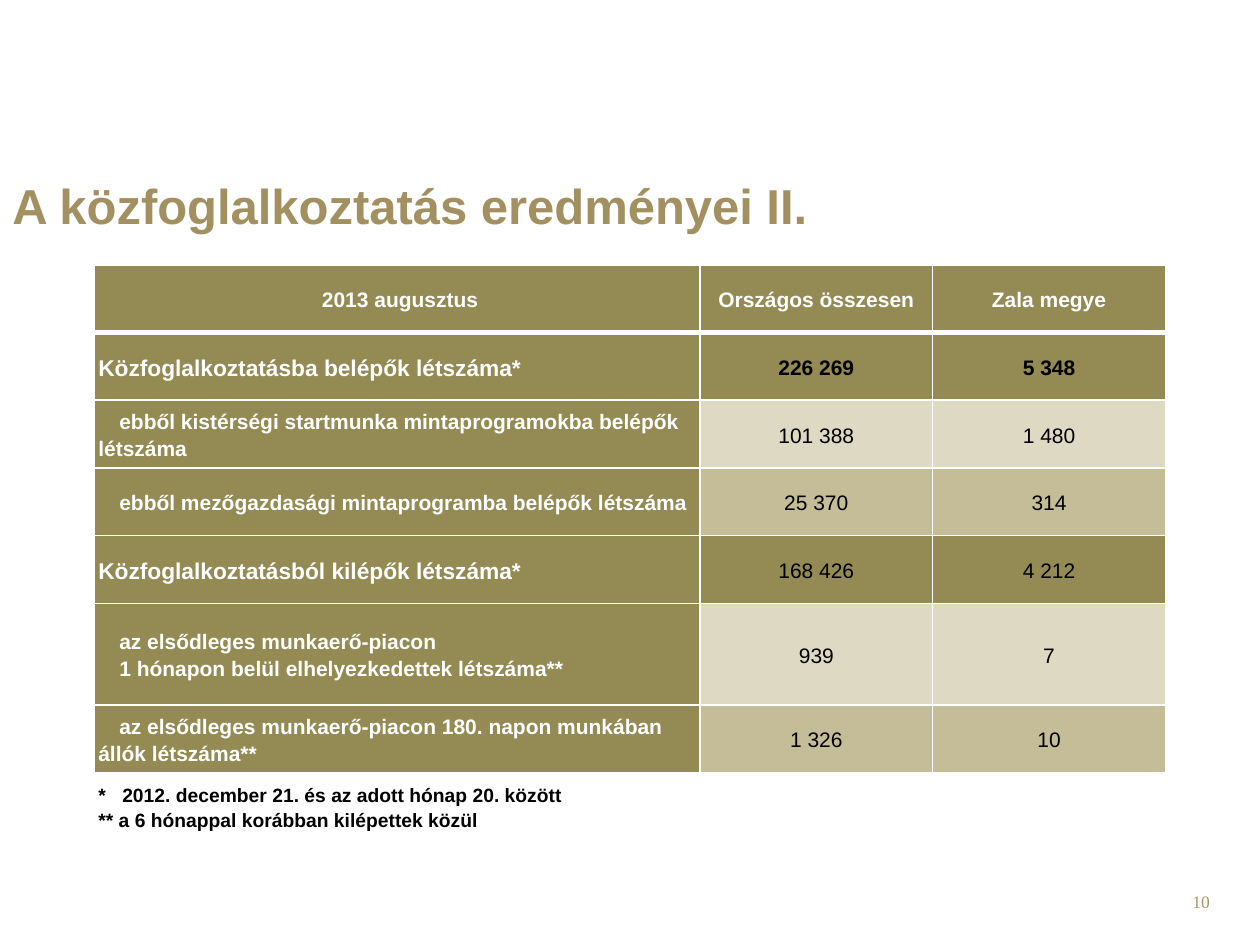
import pptx
import pptx.dml.color
import pptx.enum.text
import pptx.oxml
import pptx.oxml.ns
import pptx.util

Pt = pptx.util.Pt
ALIGN = pptx.enum.text.PP_ALIGN
ANCHOR = pptx.enum.text.MSO_ANCHOR

COLORS = {
    "title": "A29061",
    "number": "A69765",
    "olive": "948A54",
    "sand": "C4BD97",
    "pale": "DDD9C3",
    "white": "FFFFFF",
    "black": "000000",
}


def write(frame, lines, color, font, align=ALIGN.LEFT, spacing=1.0, indent=0, tab=None):
    frame.word_wrap = True
    for index, line in enumerate(lines):
        para = frame.paragraphs[0] if index == 0 else frame.add_paragraph()
        para.alignment = align
        para.line_spacing = spacing
        properties = para._p.get_or_add_pPr()
        if indent:
            properties.set("indent", str(Pt(indent)))
        if tab and "\t" in line:
            tabs = pptx.oxml.parse_xml(
                f'<a:tabLst {pptx.oxml.ns.nsdecls("a")}><a:tab pos="{Pt(tab)}" algn="l"/></a:tabLst>'
            )
            properties.append(tabs)
        span = para.add_run()
        span.text = line
        for name, value in font.items():
            setattr(span.font, name, value)
        span.font.color.rgb = pptx.dml.color.RGBColor.from_string(COLORS[color])


def set_borders(cell, widths):
    properties = cell._tc.get_or_add_tcPr()
    for index, (side, width) in enumerate(widths.items()):
        line = pptx.oxml.parse_xml(
            f'<a:{side} {pptx.oxml.ns.nsdecls("a")} w="{Pt(width)}"><a:solidFill>'
            f'<a:srgbClr val="{COLORS["white"]}"/></a:solidFill></a:{side}>'
        )
        properties.insert(index, line)


deck = pptx.Presentation()
deck.slide_width, deck.slide_height = Pt(720), Pt(540)
page = deck.slides.add_slide(deck.slide_layouts[6])

title = page.shapes.add_textbox(Pt(0), Pt(94.3), Pt(719.3), Pt(45.4))
title.text_frame.vertical_anchor = ANCHOR.MIDDLE
write(title.text_frame, ["A közfoglalkoztatás eredményei II."], "title",
      {"name": "Arial", "size": Pt(28), "bold": True})

number = page.shapes.add_textbox(Pt(530.6), Pt(505.4), Pt(167.8), Pt(28.8))
write(number.text_frame, ["10"], "number",
      {"name": "Times New Roman", "size": Pt(10)}, ALIGN.RIGHT)

ROWS = [
    ("header", "olive", ["\u00a02013 augusztus"], "Országos összesen", "Zala megye"),
    ("main", "olive", ["Közfoglalkoztatásba belépők létszáma*"], "226 269", "5 348"),
    ("sub", "pale", ["ebből kistérségi startmunka mintaprogramokba belépők létszáma"], "101 388", "1 480"),
    ("sub", "sand", ["ebből mezőgazdasági mintaprogramba belépők létszáma"], "25 370", "314"),
    ("main", "olive", ["Közfoglalkoztatásból kilépők létszáma*"], "168 426", "4 212"),
    ("sub", "pale", ["az elsődleges munkaerő-piacon", "1 hónapon belül elhelyezkedettek létszáma**"], "939", "7"),
    ("sub", "sand", ["az elsődleges munkaerő-piacon 180. napon munkában állók létszáma**"], "1 326", "10"),
    ("note", None, ["*\t2012. december 21. és az adott hónap 20. között",
                    "** a 6 hónappal korábban kilépettek közül"], "", ""),
]
LABEL_SIZES = {"header": 12, "main": 13, "sub": 12, "note": 11}
BOLD_VALUE_ROWS = (0, 1)

table = page.shapes.add_table(len(ROWS), 3, Pt(54), Pt(151.3), Pt(612), Pt(329)).table
for column, width in zip(table.columns, (346, 133, 133)):
    column.width = Pt(width)

for row_index, (kind, fill, label, *values) in enumerate(ROWS):
    table.rows[row_index].height = Pt(58.1 if row_index == 5 else 38.7)
    for column_index, lines in enumerate([label, *([value] for value in values)]):
        cell = table.cell(row_index, column_index)
        cell.vertical_anchor = ANCHOR.MIDDLE
        cell.margin_left = cell.margin_right = Pt(2.2)
        cell.margin_top = cell.margin_bottom = 0
        if fill is None:
            cell.fill.background()
        else:
            cell.fill.solid()
            shade = "olive" if column_index == 0 else fill
            cell.fill.fore_color.rgb = pptx.dml.color.RGBColor.from_string(COLORS[shade])
        set_borders(cell, {
            "lnL": 1,
            "lnR": 1,
            "lnT": 3 if row_index == 1 else 1,
            "lnB": 3 if row_index == 0 else 1,
        })
        if not lines[0]:
            continue
        is_label = column_index == 0
        is_white = kind == "header" or (is_label and kind != "note")
        font = {
            "name": "Arial",
            "size": Pt(LABEL_SIZES[kind] if is_label else 12),
            "bold": is_label or row_index in BOLD_VALUE_ROWS,
        }
        write(cell.text_frame, lines, "white" if is_white else "black", font,
              ALIGN.LEFT if is_label and kind != "header" else ALIGN.CENTER,
              1.15, 12 if is_label and kind == "sub" else 0, 13.7)

table.cell(7, 0).merge(table.cell(7, 1))

deck.save("out.pptx")
